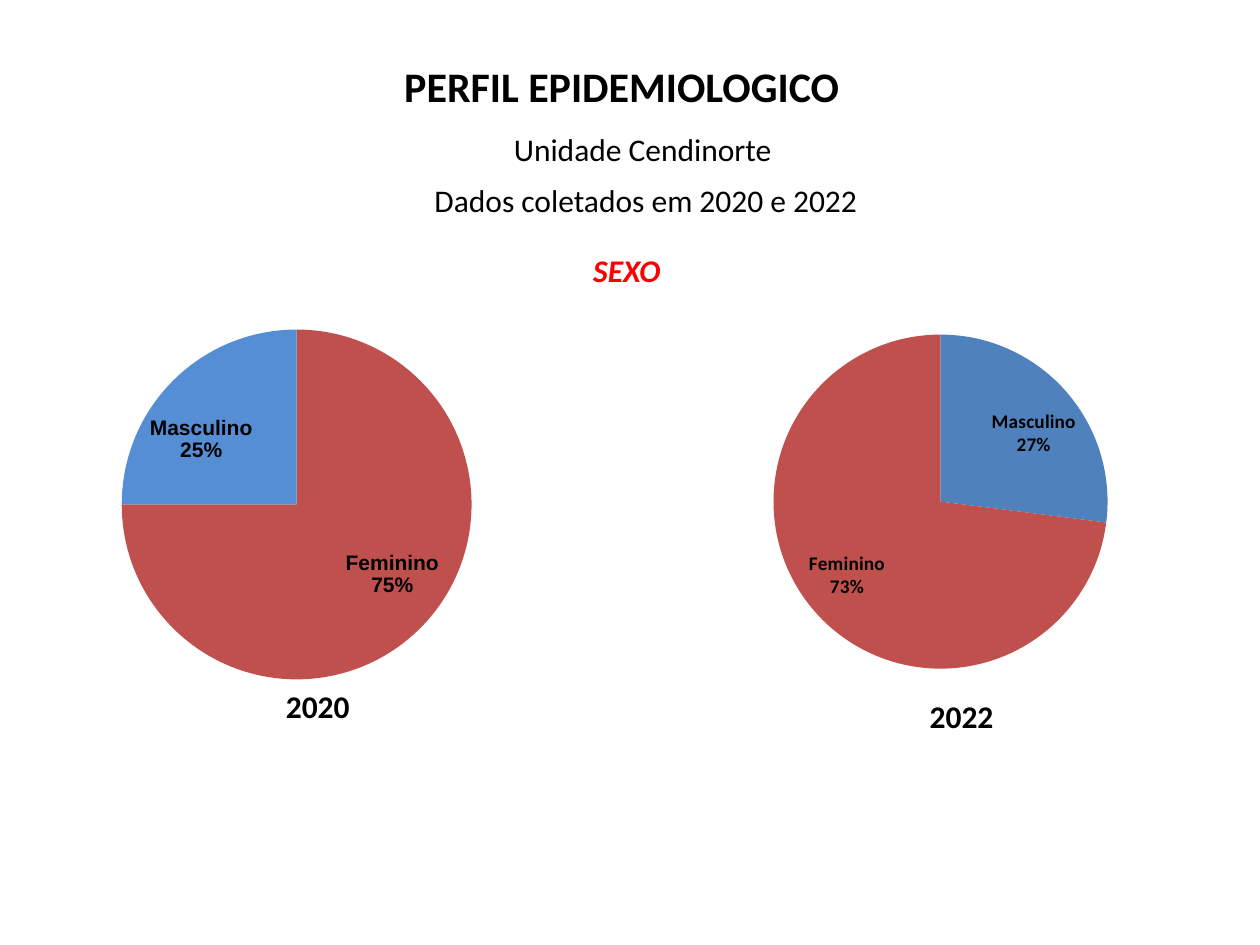
from copy import deepcopy

from lxml import etree
from pptx import Presentation
from pptx.chart.data import CategoryChartData
from pptx.dml.color import RGBColor
from pptx.enum.chart import XL_CHART_TYPE, XL_LABEL_POSITION
from pptx.enum.text import MSO_AUTO_SIZE
from pptx.oxml.ns import qn
from pptx.util import Inches, Pt

PIE = XL_CHART_TYPE.PIE
INSIDE_END = XL_LABEL_POSITION.INSIDE_END
FIT_SHAPE = MSO_AUTO_SIZE.SHAPE_TO_FIT_TEXT
COLORS = {
    "text": "000000",
    "accent": "FF0000",
    "female": "C0504D",
    "male_2020": "558ED5",
    "male_2022": "4F81BD",
}


class ProfileSlide:
    """Holds the text style and the slide, and adds captions and pies to it."""

    def __init__(self, slide, font_name="Calibri"):
        self.slide = slide
        self.font_name = font_name

    def style(self, font, size, color="text", bold=False, italic=False, name=None):
        font.name = name or self.font_name
        font.size = Pt(size)
        font.bold = bold
        font.italic = italic
        font.color.rgb = RGBColor.from_string(COLORS[color])

    def caption(self, text, box, size=18, **style):
        frame = self.slide.shapes.add_textbox(*map(Inches, box)).text_frame
        frame.word_wrap = False
        frame.auto_size = FIT_SHAPE
        frame.text = text
        self.style(frame.paragraphs[0].font, size, **style)

    def pie(self, box, shares, plot, label_size, label_font=None):
        chart_data = CategoryChartData()
        chart_data.categories = [sex for sex, _, _, _ in shares]
        chart_data.add_series("Series 1", [share for _, share, _, _ in shares])
        chart = self.slide.shapes.add_chart(PIE, *map(Inches, box), chart_data).chart
        chart.has_title = False
        chart.has_legend = False
        self.style(chart.font, 10)

        pie_plot = chart.plots[0]
        pie_plot.vary_by_categories = True
        series = pie_plot.series[0]
        for index, (_, _, color, _) in enumerate(shares):
            slice_format = series.points[index].format
            slice_format.fill.solid()
            slice_format.fill.fore_color.rgb = RGBColor.from_string(COLORS[color])
            slice_format.line.fill.background()
        offsets = [offset for _, _, _, offset in shares]
        self.label_slices(series.data_labels, offsets, label_size, label_font)

        plot_area = chart._chartSpace.chart.plotArea
        for old_layout in plot_area.findall(qn("c:layout")):
            plot_area.remove(old_layout)
        modes = [("layoutTarget", "inner"), ("xMode", "edge"), ("yMode", "edge")]
        plot_area.insert(0, self.layout(plot, modes))

    def label_slices(self, labels, offsets, size, font_name):
        labels.show_category_name = True
        labels.show_percentage = True
        labels.show_value = False
        labels.number_format = "0%"
        labels.number_format_is_linked = False
        labels.position = INSIDE_END
        self.style(labels.font, size, bold=True, name=font_name)
        group = labels._element
        separator = etree.Element(qn("c:separator"))
        separator.text = "\n"
        group.find(qn("c:showBubbleSize")).addnext(separator)

        shared = [part for part in group if part.tag != qn("c:showLeaderLines")]
        for index, offset in enumerate(offsets):
            label = etree.Element(qn("c:dLbl"))
            etree.SubElement(label, qn("c:idx")).set("val", str(index))
            label.append(self.layout(offset))
            label.extend(deepcopy(shared))
            group.insert(index, label)

    def layout(self, percents, modes=()):
        layout = etree.Element(qn("c:layout"))
        manual = etree.SubElement(layout, qn("c:manualLayout"))
        fractions = [percent / 100 for percent in percents]
        for tag, value in [*modes, *zip("xywh", fractions)]:
            etree.SubElement(manual, qn(f"c:{tag}")).set("val", str(value))
        return layout


def main():
    deck = Presentation()
    deck.slide_width, deck.slide_height = Inches(10), Inches(7.5)
    profile = ProfileSlide(deck.slides.add_slide(deck.slide_layouts[6]))

    profile.caption("PERFIL EPIDEMIOLOGICO", (3.11, 0.43, 3.69, 0.5), 24, bold=True)
    profile.caption("Unidade Cendinorte", (3.98, 0.98, 2.27, 0.4))
    profile.caption("Dados coletados em 2020 e 2022", (3.35, 1.39, 3.6, 0.4))
    profile.caption("SEXO", (4.61, 1.94, 0.74, 0.4), color="accent", bold=True, italic=True)

    profile.pie(
        (-0.05, 2.13, 5, 3.35),
        [("Feminino", 75, "female", (3.8, -6.2)),
         ("Masculino", 25, "male_2020", (-4.5, 7.3))],
        (4.9, 14.5, 86.4, 82.9), 12, "Arial",
    )
    profile.pie(
        (4.78, 2.47, 5, 3),
        [("Masculino", 27, "male_2022", (2.5, 3.7)),
         ("Feminino", 73, "female", (-1.9, -2.1))],
        (7.4, 6.2, 92.6, 88.4), 11,
    )
    profile.caption("2020", (2.17, 5.4, 0.71, 0.4), bold=True)
    profile.caption("2022", (7.28, 5.48, 0.71, 0.4), bold=True)

    deck.save("out.pptx")


if __name__ == "__main__":
    main()
